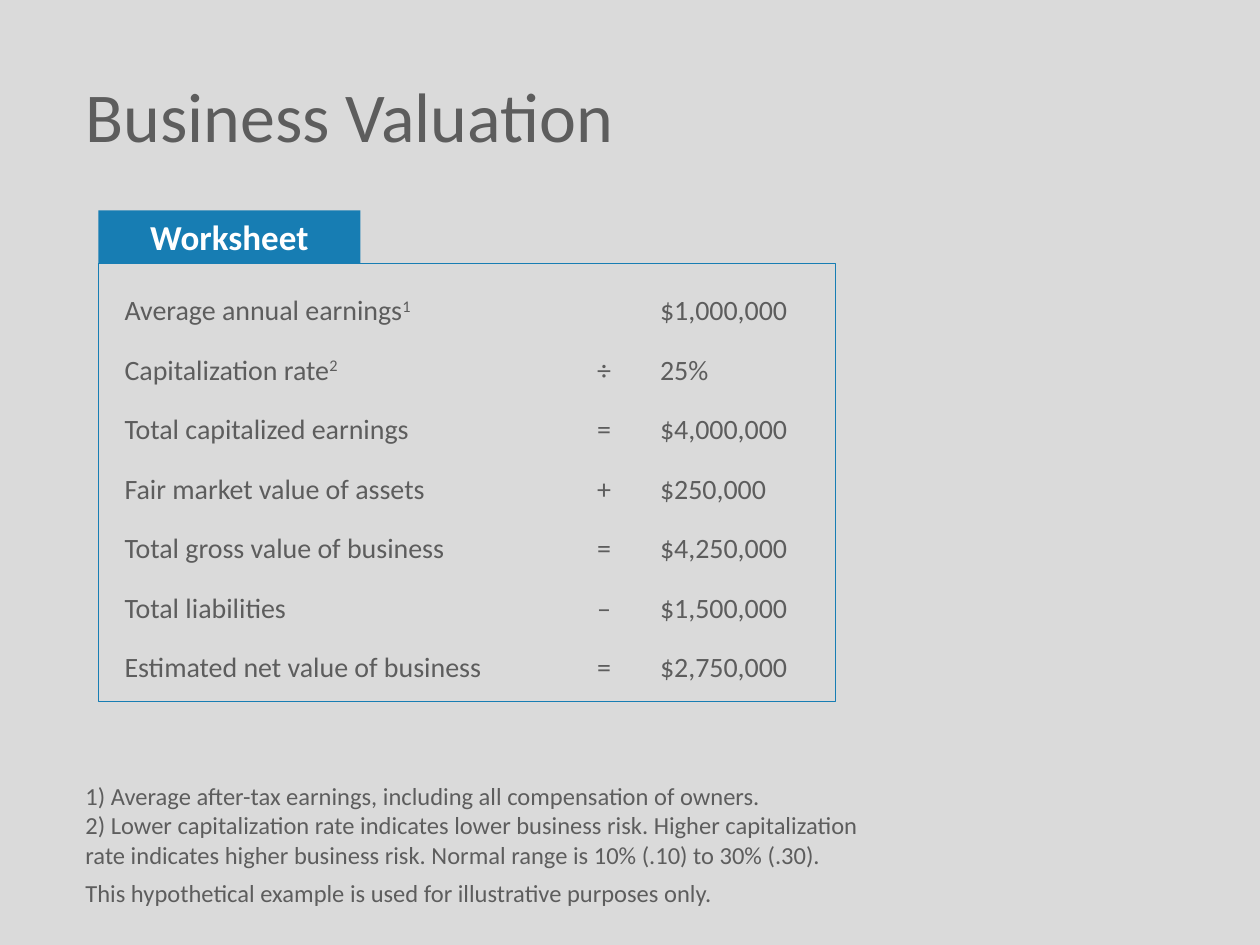
import pptx
import pptx.util
import pptx.dml.color
import pptx.enum.shapes
import pptx.enum.text
import pptx.oxml.ns
from lxml import etree

Inches = pptx.util.Inches
Pt = pptx.util.Pt
Anchor = pptx.enum.text.MSO_ANCHOR
Align = pptx.enum.text.PP_ALIGN
Rect = pptx.enum.shapes.MSO_SHAPE.RECTANGLE
qn = pptx.oxml.ns.qn

colors = {
    name: pptx.dml.color.RGBColor.from_string(code)
    for name, code in {
        "back": "DADADA",
        "text": "5D5D5D",
        "blue": "177DB3",
        "white": "FFFFFF",
    }.items()
}


def add_text(para, text, size, color="text", bold=False):
    run = para.add_run()
    run.text = text
    run.font.name = "Calibri"
    run.font.size = Pt(size)
    run.font.bold = bold
    run.font.color.rgb = colors[color]
    return run


deck = pptx.Presentation()
deck.slide_width = Inches(10)
deck.slide_height = Inches(7.5)
slide = deck.slides.add_slide(deck.slide_layouts[5])
slide.background.fill.solid()
slide.background.fill.fore_color.rgb = colors["back"]
shapes = slide.shapes

title = shapes.title
title.left, title.top = Inches(0.58), Inches(0.61)
title.width, title.height = Inches(8.93), Inches(0.68)
frame = title.text_frame
frame.auto_size = pptx.enum.text.MSO_AUTO_SIZE.NONE
frame.vertical_anchor = Anchor.MIDDLE
para = frame.paragraphs[0]
para.alignment = Align.LEFT
para.line_spacing = 0.9
add_text(para, "Business Valuation", 40)

border = shapes.add_shape(Rect, Inches(0.78), Inches(2.09), Inches(5.85), Inches(3.48))
border.shadow.inherit = False
border.fill.background()
border.line.color.rgb = colors["blue"]
border.line.width = Pt(0.75)

rows = [
    ("Average annual earnings", "1", "", "$1,000,000"),
    ("Capitalization rate", "2", "÷", "25%"),
    ("Total capitalized earnings", "", "=", "$4,000,000"),
    ("Fair market value of assets", "", "+", "$250,000"),
    ("Total gross value of business", "", "=", "$4,250,000"),
    ("Total liabilities", "", "–", "$1,500,000"),
    ("Estimated net value of business", "", "=", "$2,750,000"),
]
sheet = shapes.add_textbox(Inches(0.89), Inches(2.07), Inches(5.85), Inches(3.44))
frame = sheet.text_frame
frame.word_wrap = True
for index, (label, note, sign, value) in enumerate(rows):
    para = frame.add_paragraph() if index else frame.paragraphs[0]
    tabs = etree.SubElement(para._p.get_or_add_pPr(), qn("a:tabLst"))
    for stop in (3.75, 4.25):
        etree.SubElement(tabs, qn("a:tab"), pos=str(Inches(stop)), algn="l")
    para.line_spacing = Pt(34)
    add_text(para, label, 16)
    if note:
        mark = add_text(para, note, 16)
        mark._r.get_or_add_rPr().set("baseline", "30000")
    add_text(para, f"\t{sign}\t{value}", 16)

notes = [
    ["1) Average after-tax earnings, including all compensation of owners."],
    [
        "2) Lower capitalization rate indicates lower business risk. Higher capitalization ",
        "rate indicates higher business risk. Normal range is 10% (.10) to 30% (.30).",
    ],
    ["This hypothetical example is used for illustrative purposes only."],
]
foot = shapes.add_textbox(Inches(0.58), Inches(6.15), Inches(7.84), Inches(1.13))
frame = foot.text_frame
frame.word_wrap = True
for index, lines in enumerate(notes):
    para = frame.add_paragraph() if index else frame.paragraphs[0]
    for place, line in enumerate(lines):
        if place:
            para.add_line_break()
        add_text(para, line, 14)
para.space_before = Pt(5)

tab = shapes.add_shape(Rect, Inches(0.78), Inches(1.67), Inches(2.08), Inches(0.42))
tab.shadow.inherit = False
tab.fill.solid()
tab.fill.fore_color.rgb = colors["blue"]
tab.line.fill.background()
frame = tab.text_frame
frame.word_wrap = False
frame.vertical_anchor = Anchor.MIDDLE
para = frame.paragraphs[0]
para.alignment = Align.CENTER
add_text(para, "Worksheet", 20, "white", True)

deck.save("out.pptx")
